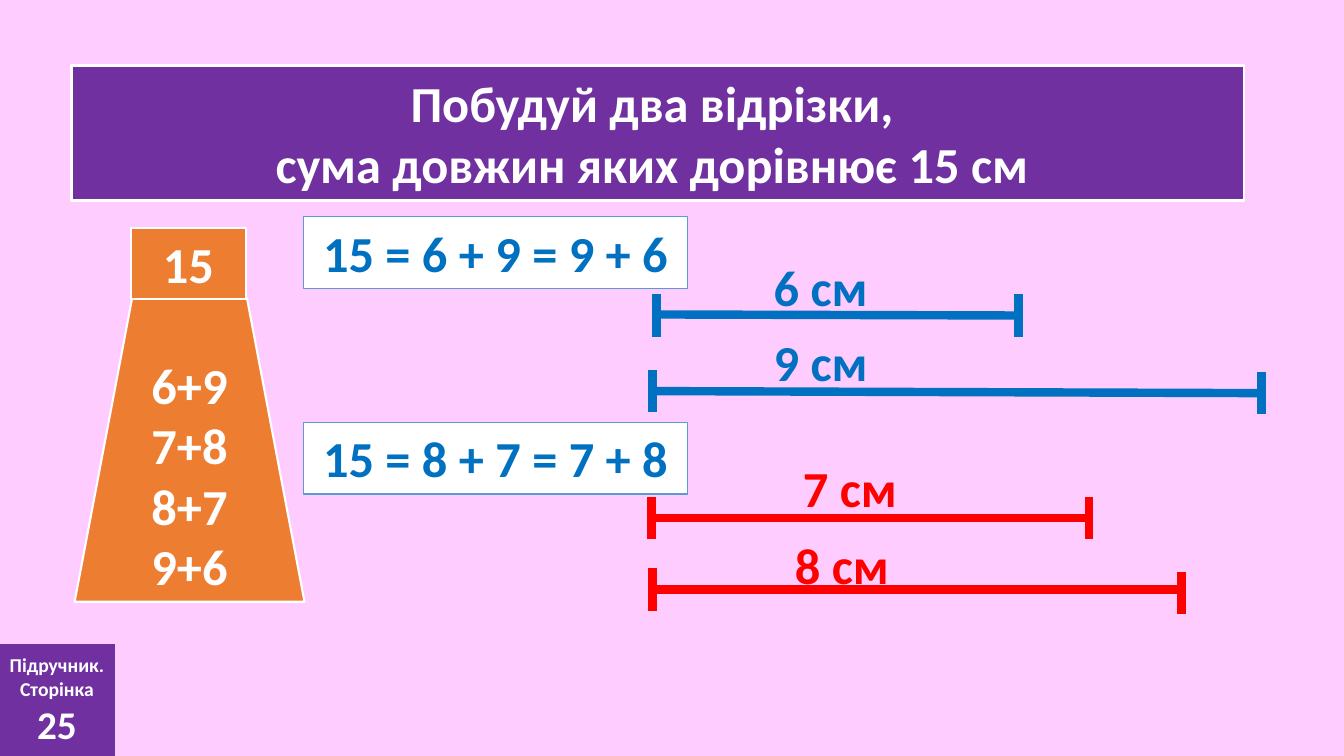
from pptx import Presentation
from pptx.dml.color import RGBColor
from pptx.enum.shapes import MSO_CONNECTOR, MSO_SHAPE
from pptx.enum.text import MSO_ANCHOR, MSO_AUTO_SIZE, PP_ALIGN
from pptx.oxml.ns import qn
from pptx.util import Pt
from lxml import etree

RECT, TRAP = MSO_SHAPE.RECTANGLE, MSO_SHAPE.TRAPEZOID
LINE = MSO_CONNECTOR.STRAIGHT
TOP, MID = MSO_ANCHOR.TOP, MSO_ANCHOR.MIDDLE
GROW, FIXED = MSO_AUTO_SIZE.SHAPE_TO_FIT_TEXT, MSO_AUTO_SIZE.NONE
CENTER = PP_ALIGN.CENTER

PX = 9144  # EMU per px, 100 px to the inch
FONT = "Calibri"
PINK, WHITE, PURPLE, ORANGE = "FFCCFF", "FFFFFF", "7030A0", "ED7D31"
BLUE, RED, EDGE = "0070C0", "FF0000", "5B9BD5"
TICK = 21  # half the height of an end mark

# lines of text, sizes in points
TITLE = ["Побудуй два відрізки, ", "сума довжин яких дорівнює 15 см "]
PAGE = ["Підручник.", "Сторінка", "25"]
SUMS = ["6+9", "7+8", "8+7", "9+6"]

# kind, box, lines, sizes, fill, edge, edge width, text colour, anchor, fit
SHAPES = [
    (RECT, (71, 65, 1163, 134), TITLE, [36, 36], PURPLE, WHITE, 1.5, WHITE, MID, FIXED),
    (RECT, (-1, 639, 115, 111), PAGE, [14, 14, 28], PURPLE, None, 0, WHITE, MID, FIXED),
    (TRAP, (74, 296, 228, 301), SUMS, [36] * 4, ORANGE, WHITE, 1.5, WHITE, TOP, GROW),
    (RECT, (130, 226, 114, 71), ["15"], [36], ORANGE, WHITE, 1.5, WHITE, TOP, GROW),
]
# equation, top
EQUATIONS = [("15 = 6 + 9 = 9 + 6", 215), ("15 = 8 + 7 = 7 + 8", 419)]
# label, its left and top, colour, line start, line end, centres of both marks
SEGMENTS = [
    ("6 см", 757, 249, BLUE, (652, 312), (1010, 313), (651, 313), (1010, 313)),
    ("9 см", 757, 324, BLUE, (651, 388), (1251, 390), (647, 388), (1251, 390)),
    ("7 см", 786, 449, RED, (647, 514), (1080, 514), (646, 514), (1080, 514)),
    ("8 см", 778, 525, RED, (647, 585), (1170, 585), (647, 585), (1172, 588)),
]


def rgb(color):
    return RGBColor.from_string(color)


def emu(nums):
    return [n * PX for n in nums]


def write(shape, lines, sizes, color, anchor=TOP, fit=GROW):
    frame = shape.text_frame
    frame.text = "\n".join(lines)
    frame.word_wrap = True
    frame.auto_size = fit
    frame.vertical_anchor = anchor
    for para, size in zip(frame.paragraphs, sizes):
        para.alignment = CENTER
        font = para.runs[0].font
        font.name, font.size, font.bold = FONT, Pt(size), True
        font.color.rgb = rgb(color)


def block(kind, box, lines, sizes, fill, edge, width, color, anchor, fit):
    shape = slide.shapes.add_shape(kind, *emu(box))
    shape.shadow.inherit = False
    shape.fill.solid()
    shape.fill.fore_color.rgb = rgb(fill)
    if edge:
        shape.line.color.rgb = rgb(edge)
        shape.line.width = Pt(width)
    else:
        shape.line.fill.background()
    write(shape, lines, sizes, color, anchor, fit)


def stroke(start, end, color):
    line = slide.shapes.add_connector(LINE, *emu(start + end))
    line.line.color.rgb = rgb(color)
    line.line.width = Pt(6)
    etree.SubElement(line._element.spPr, qn("a:effectLst"))


deck = Presentation()
deck.slide_width, deck.slide_height = emu((1333, 750))
slide = deck.slides.add_slide(deck.slide_layouts[6])
slide.background.fill.solid()
slide.background.fill.fore_color.rgb = rgb(PINK)

# title, page mark and the number house
for item in SHAPES:
    block(*item)

# equations
for text, top in EQUATIONS:
    block(RECT, (301, top, 381, 71), [text], [36], WHITE, EDGE, 1, BLUE, TOP, GROW)

# segments with labels and end marks
for text, left, top, color, start, end, *marks in SEGMENTS:
    stroke(start, end, color)
    label = slide.shapes.add_textbox(*emu((left, top, 114, 71)))
    write(label, [text], [36], color)
    for x, y in marks:
        stroke((x, y - TICK), (x, y + TICK), color)

deck.save("out.pptx")
